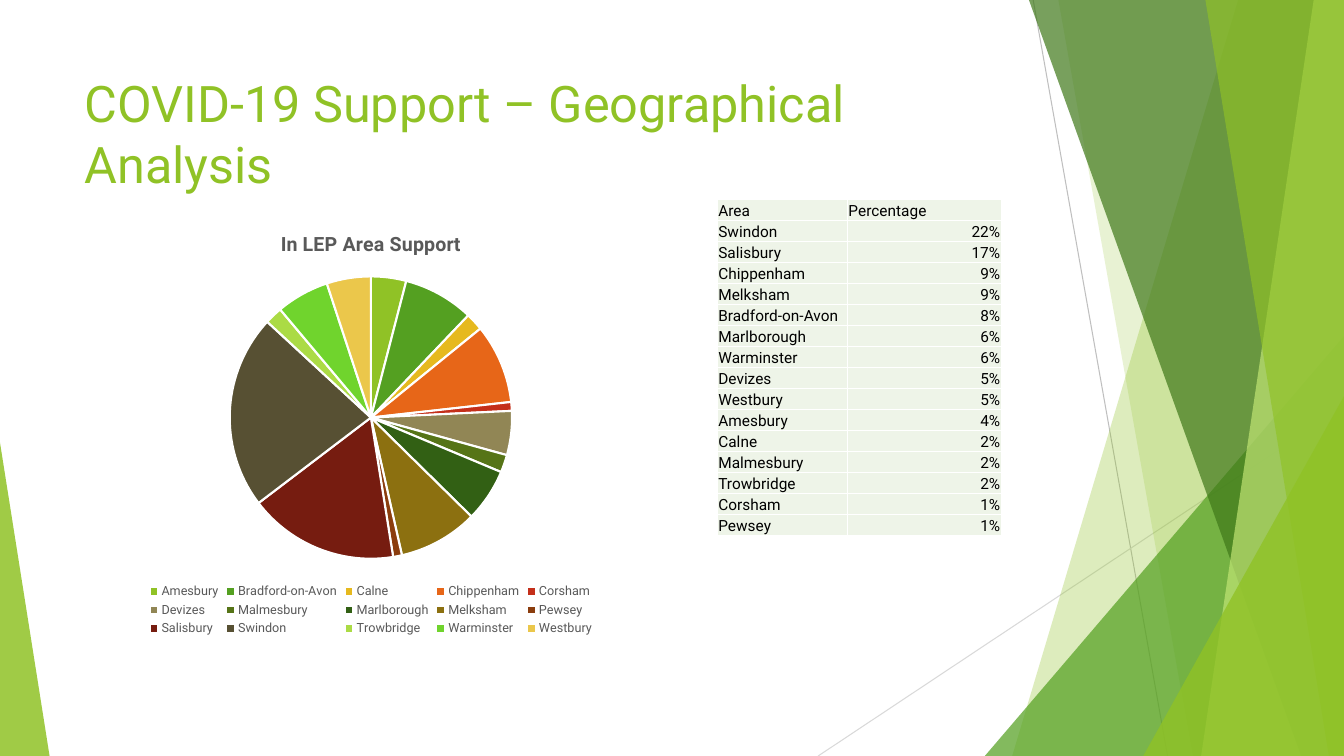
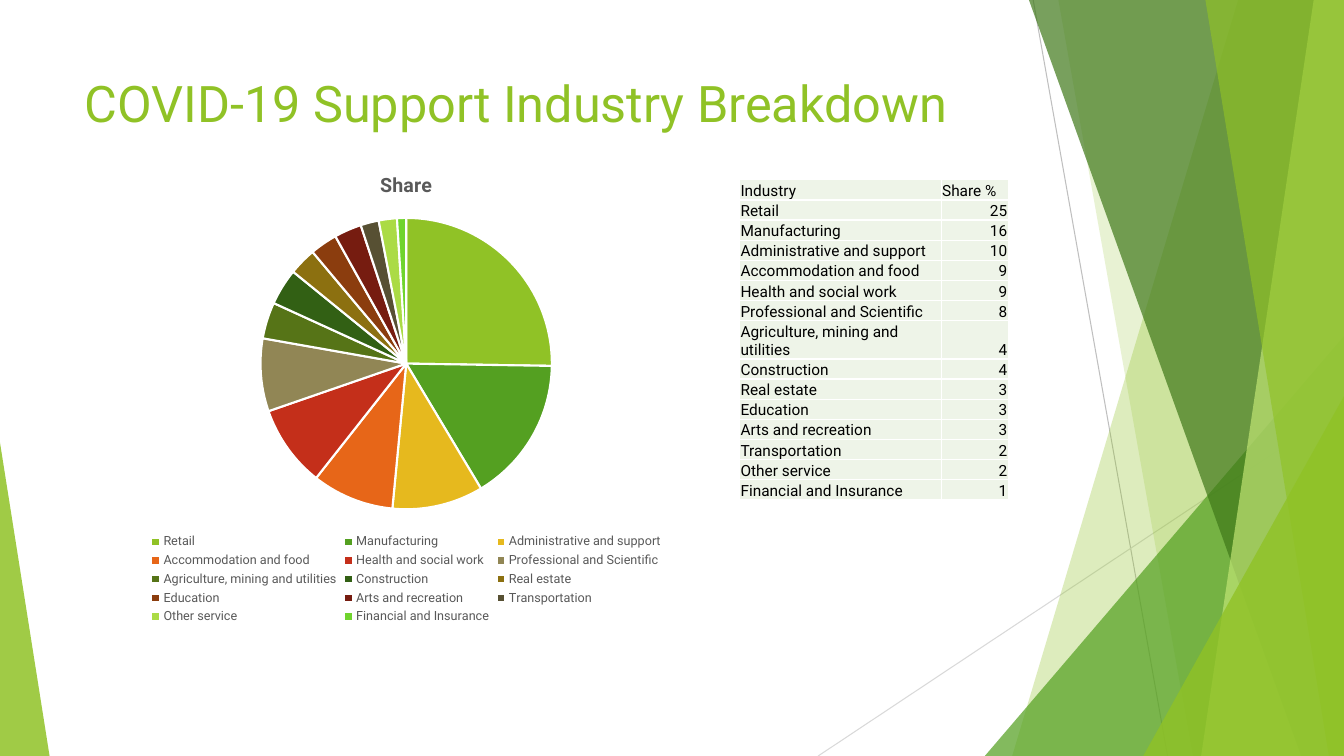
from dataclasses import dataclass
from typing import NamedTuple

from lxml.etree import SubElement
from pptx import Presentation
from pptx.chart.data import CategoryChartData
from pptx.dml.color import RGBColor
from pptx.enum.chart import XL_CHART_TYPE as ChartType, XL_LEGEND_POSITION as LegendPosition
from pptx.enum.shapes import MSO_CONNECTOR as Connector, MSO_SHAPE as Preset
from pptx.enum.text import MSO_ANCHOR as Anchor, PP_ALIGN as Align
from pptx.oxml.ns import qn
from pptx.util import Emu, Inches, Pt

COLUMNS, ROWS = 80, 45
CELL = Inches(1) // 6

FONT = "Roboto"
LIME = RGBColor(0x90, 0xC2, 0x26)
GREEN = RGBColor(0x54, 0xA0, 0x21)
FOREST = RGBColor(0x3F, 0x78, 0x19)
PALE_LIME = RGBColor(0xC0, 0xE4, 0x74)
SILVER = RGBColor(0xBF, 0xBF, 0xBF)
LIGHT_GREY = RGBColor(0xD9, 0xD9, 0xD9)
GREY = RGBColor(0x59, 0x59, 0x59)
BLACK = RGBColor(0x00, 0x00, 0x00)
WHITE = RGBColor(0xFF, 0xFF, 0xFF)
MINT = RGBColor(0xEE, 0xF4, 0xE8)
SLICE_COLOURS = [LIME, GREEN] + [RGBColor.from_string(code) for code in (
    "E6B91E", "E76618", "C42F1A", "918655", "567417", "326014", "8C7010",
    "8B3D0E", "761C10", "575033", "ABDB45", "70D42D", "EBC74B")]


class Area(NamedTuple):
    left: float
    top: float
    width: float
    height: float


class Ray(NamedTuple):
    start: tuple[float, float]
    end: tuple[float, float]
    colour: RGBColor


class Band(NamedTuple):
    top_left: float
    bottom_left: float
    colour: RGBColor
    opacity: int


class Wedge(NamedTuple):
    area: Area
    apex: float
    colour: RGBColor
    opacity: int


class Share(NamedTuple):
    label: str
    value: int


@dataclass(frozen=True)
class Breakdown:
    title: str
    chart_title: str
    chart_area: Area
    slices: list[Share]
    headings: tuple[str, str]
    rows: list[Share]
    unit: str
    table_left: float
    table_top: float
    column_widths: tuple[float, float]
    row_height: float


TITLE_AREA = Area(4.44, 4.02, 56.4, 8.64)

RAYS = [
    Ray((61.5, 0), (69.5, ROWS), SILVER),
    Ray((COLUMNS, 24.2), (48.7, ROWS), LIGHT_GREY),
]

DECORATION = [
    Band(73.7, 60.25, LIME, 30),
    Band(63, 71, LIME, 20),
    Wedge(Area(58.62, 20, 21.38, 25), 1, GREEN, 72),
    Band(61.25, 77.45, FOREST, 70),
    Band(78.2, 71.5, PALE_LIME, 70),
    Band(71.75, 79.1, LIME, 65),
    Wedge(Area(68.05, 23.58, 11.95, 21.42), 1, LIME, 80),
    Wedge(Area(0, 26.35, 2.95, 18.65), 0, LIME, 85),
]

TOWNS = [
    Share("Swindon", 22), Share("Salisbury", 17), Share("Chippenham", 9),
    Share("Melksham", 9), Share("Bradford-on-Avon", 8), Share("Marlborough", 6),
    Share("Warminster", 6), Share("Devizes", 5), Share("Westbury", 5),
    Share("Amesbury", 4), Share("Calne", 2), Share("Malmesbury", 2),
    Share("Trowbridge", 2), Share("Corsham", 1), Share("Pewsey", 1),
]

INDUSTRIES = [
    Share("Retail", 25), Share("Manufacturing", 16),
    Share("Administrative and support", 10), Share("Accommodation and food", 9),
    Share("Health and social work", 9), Share("Professional and Scientific", 8),
    Share("Agriculture, mining and utilities", 4), Share("Construction", 4),
    Share("Real estate", 3), Share("Education", 3), Share("Arts and recreation", 3),
    Share("Transportation", 2), Share("Other service", 2),
    Share("Financial and Insurance", 1),
]

BREAKDOWNS = [
    Breakdown(
        title="COVID-19 Support – Geographical Analysis",
        chart_title="In LEP Area Support", chart_area=Area(2.7, 12.66, 38.76, 25.44),
        slices=sorted(TOWNS), headings=("Area", "Percentage"), rows=TOWNS, unit="%",
        table_left=42.7, table_top=11.88, column_widths=(7.75, 9.15), row_height=1.25),
    Breakdown(
        title="COVID-19 Support Industry Breakdown",
        chart_title="Share", chart_area=Area(3.6, 9.12, 41.16, 28.26),
        slices=INDUSTRIES, headings=("Industry", "Share %"), rows=INDUSTRIES, unit="",
        table_left=44.02, table_top=10.7, column_widths=(12, 4), row_height=1.2),
]


def grid(count: float) -> Emu:
    return Emu(round(count * CELL))


def place(area: Area) -> list[Emu]:
    return [grid(length) for length in area]


def style_font(font, *, size: float, colour: RGBColor) -> None:
    font.name = FONT
    font.size = Pt(size)
    font.color.rgb = colour


def write_text(frame, text: str, *, size: float, colour: RGBColor, align=Align.LEFT) -> None:
    para = frame.paragraphs[0]
    para.alignment = align
    span = para.add_run()
    span.text = text
    style_font(span.font, size=size, colour=colour)


def paint(shape, colour: RGBColor, opacity: int) -> None:
    shape.shadow.inherit = False
    shape.line.fill.background()
    shape.fill.solid()
    shape.fill.fore_color.rgb = colour
    for node in shape.element.spPr.iter(qn("a:srgbClr")):
        SubElement(node, qn("a:alpha")).set("val", str(opacity * 1000))


def draw_ray(page, ray: Ray) -> None:
    points = [grid(length) for length in (*ray.start, *ray.end)]
    line = page.shapes.add_connector(Connector.STRAIGHT, *points)
    line.line.color.rgb = ray.colour
    line.line.width = Pt(0.75)
    SubElement(line.element.spPr, qn("a:effectLst"))


def draw_band(page, band: Band) -> None:
    builder = page.shapes.build_freeform(grid(band.top_left), 0)
    corners = [(COLUMNS, 0), (COLUMNS, ROWS), (band.bottom_left, ROWS)]
    builder.add_line_segments([(grid(x), grid(y)) for x, y in corners], close=True)
    paint(builder.convert_to_shape(), band.colour, band.opacity)


def draw_wedge(page, wedge: Wedge) -> None:
    shape = page.shapes.add_shape(Preset.ISOSCELES_TRIANGLE, *place(wedge.area))
    shape.adjustments[0] = wedge.apex
    paint(shape, wedge.colour, wedge.opacity)


def draw_backdrop(page) -> None:
    for ray in RAYS:
        draw_ray(page, ray)
    for part in DECORATION:
        if isinstance(part, Band):
            draw_band(page, part)
        else:
            draw_wedge(page, part)


def draw_title(page, text: str) -> None:
    box = page.shapes.add_textbox(*place(TITLE_AREA))
    box.text_frame.word_wrap = True
    write_text(box.text_frame, text, size=36, colour=LIME)


def draw_pie(page, breakdown: Breakdown) -> None:
    data = CategoryChartData()
    data.categories = [share.label for share in breakdown.slices]
    data.add_series(breakdown.chart_title, [share.value for share in breakdown.slices])
    chart = page.shapes.add_chart(ChartType.PIE, *place(breakdown.chart_area), data).chart
    style_font(chart.font, size=10, colour=BLACK)
    chart.has_title = True
    chart.chart_title.include_in_layout = False
    write_text(chart.chart_title.text_frame, breakdown.chart_title,
               size=14, colour=GREY, align=Align.CENTER)
    chart.has_legend = True
    chart.legend.position = LegendPosition.BOTTOM
    chart.legend.include_in_layout = False
    style_font(chart.legend.font, size=9, colour=GREY)
    plot = chart.plots[0]
    plot.vary_by_categories = True
    for index, colour in enumerate(SLICE_COLOURS[:len(breakdown.slices)]):
        piece = plot.series[0].points[index].format
        piece.fill.solid()
        piece.fill.fore_color.rgb = colour
        piece.line.color.rgb = WHITE
        piece.line.width = Pt(1.5)


def add_borders(cell) -> None:
    properties = cell._tc.get_or_add_tcPr()
    for side in ("a:lnL", "a:lnR", "a:lnT", "a:lnB"):
        border = SubElement(properties, qn(side), w=str(Pt(1)))
        fill = SubElement(border, qn("a:solidFill"))
        SubElement(fill, qn("a:srgbClr"), val=str(WHITE))


def fill_cell(cell, text: str, align) -> None:
    cell.margin_left = cell.margin_right = cell.margin_top = grid(0.06)
    cell.margin_bottom = 0
    cell.vertical_anchor = Anchor.BOTTOM
    add_borders(cell)
    cell.fill.solid()
    cell.fill.fore_color.rgb = MINT
    write_text(cell.text_frame, text, size=11, colour=BLACK, align=align)


def draw_table(page, breakdown: Breakdown) -> None:
    lines = [breakdown.headings]
    lines += [(share.label, f"{share.value}{breakdown.unit}") for share in breakdown.rows]
    widths = breakdown.column_widths
    area = Area(breakdown.table_left, breakdown.table_top,
                sum(widths), len(lines) * breakdown.row_height)
    table = page.shapes.add_table(len(lines), len(widths), *place(area)).table
    table.first_row = table.horz_banding = False
    for column, width in zip(table.columns, widths):
        column.width = grid(width)
    for row_index, line in enumerate(lines):
        table.rows[row_index].height = grid(breakdown.row_height)
        for column_index, text in enumerate(line):
            align = Align.RIGHT if row_index and column_index else Align.LEFT
            fill_cell(table.cell(row_index, column_index), text, align)


def main() -> None:
    deck = Presentation()
    deck.slide_width, deck.slide_height = grid(COLUMNS), grid(ROWS)
    for breakdown in BREAKDOWNS:
        page = deck.slides.add_slide(deck.slide_layouts[6])
        draw_backdrop(page)
        draw_title(page, breakdown.title)
        draw_pie(page, breakdown)
        draw_table(page, breakdown)
    deck.save("out.pptx")


if __name__ == "__main__":
    main()
